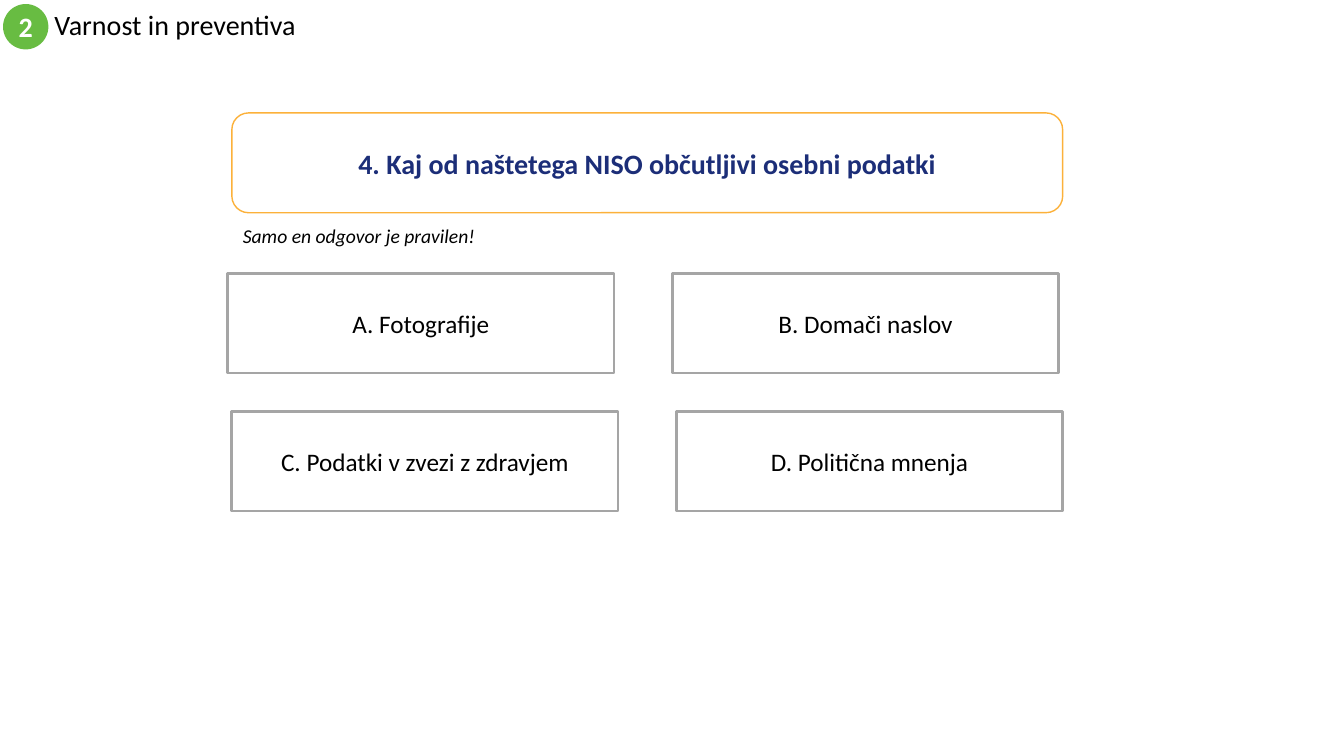
"""Build a quiz slide on sensitive personal data."""
from pptx import Presentation
from pptx import util as u
from pptx.dml.color import RGBColor
from pptx.enum import shapes, text

TITLE = "Varnost in preventiva"
NUMBER = "2"
QUESTION = "4. Kaj od naštetega NISO občutljivi osebni podatki"
HINT = "Samo en odgovor je pravilen!"
ANSWERS = [
    ["A. Fotografije", "B. Domači naslov"],
    ["C. Podatki v zvezi z zdravjem", "D. Politična mnenja"],
]
COLORS = {"white": "FFFFFF", "black": "000000", "green": "68BC42",
          "gold": "FCB13A", "navy": "1C2E78", "gray": "A5A5A5"}
KINDS = shapes.MSO_SHAPE
LEFT, CENTER = text.PP_ALIGN.LEFT, text.PP_ALIGN.CENTER
MIDDLE, TOP = text.MSO_ANCHOR.MIDDLE, text.MSO_ANCHOR.TOP


def color(name):
    return RGBColor.from_string(COLORS[name])


def write(shape, words, size, ink="black", align=CENTER, anchor=MIDDLE, **style):
    frame = shape.text_frame
    frame.text = words
    frame.word_wrap = True
    frame.auto_size = text.MSO_AUTO_SIZE.NONE
    frame.vertical_anchor = anchor
    para = frame.paragraphs[0]
    para.alignment = align
    font = para.runs[0].font
    look = {"name": "Calibri", "size": u.Pt(size), **style}
    for key, value in look.items():
        setattr(font, key, value)
    font.color.rgb = color(ink)
    return para


def place(shape, *box):
    for key, value in zip(("left", "top", "width", "height"), box):
        setattr(shape, key, u.Inches(value))


def draw(slide, kind, box, fill, edge=None, weight=1):
    shape = slide.shapes.add_shape(kind, *map(u.Inches, box))
    shape.shadow.inherit = False
    shape.fill.solid()
    shape.fill.fore_color.rgb = color(fill)
    if edge:
        shape.line.color.rgb = color(edge)
        shape.line.width = u.Pt(weight)
    else:
        shape.line.fill.background()
    return shape


def main():
    deck = Presentation()
    deck.slide_width, deck.slide_height = u.Inches(13.33), u.Inches(7.5)
    slide = deck.slides.add_slide(deck.slide_layouts[5])

    title = slide.shapes.title
    place(title, 0.44, 0.04, 8, 0.45)
    write(title, TITLE, 20, align=LEFT).line_spacing = 0.9

    badge = draw(slide, KINDS.OVAL, (0.03, 0.04, 0.45, 0.45), "green")
    write(badge, NUMBER, 20, "white", bold=True)
    badge.text_frame.word_wrap = False

    panel = draw(slide, KINDS.ROUNDED_RECTANGLE, (2.3, 1.12, 8.24, 0.99),
                 "white", "gold")
    write(panel, QUESTION, 20, "navy", bold=True)

    hint = slide.shapes.add_textbox(*map(u.Inches, (2.31, 2.17, 3.16, 0.34)))
    write(hint, HINT, 14, align=LEFT, anchor=TOP, italic=True)

    for row, pair in enumerate(ANSWERS):
        for col, answer in enumerate(pair):
            box = (2.26 + 4.41 * col + 0.04 * row, 2.71 + 1.37 * row, 3.83, 0.99)
            card = draw(slide, KINDS.RECTANGLE, box, "white", "gray", 2)
            write(card, answer, 18)

    deck.save("out.pptx")


if __name__ == "__main__":
    main()
